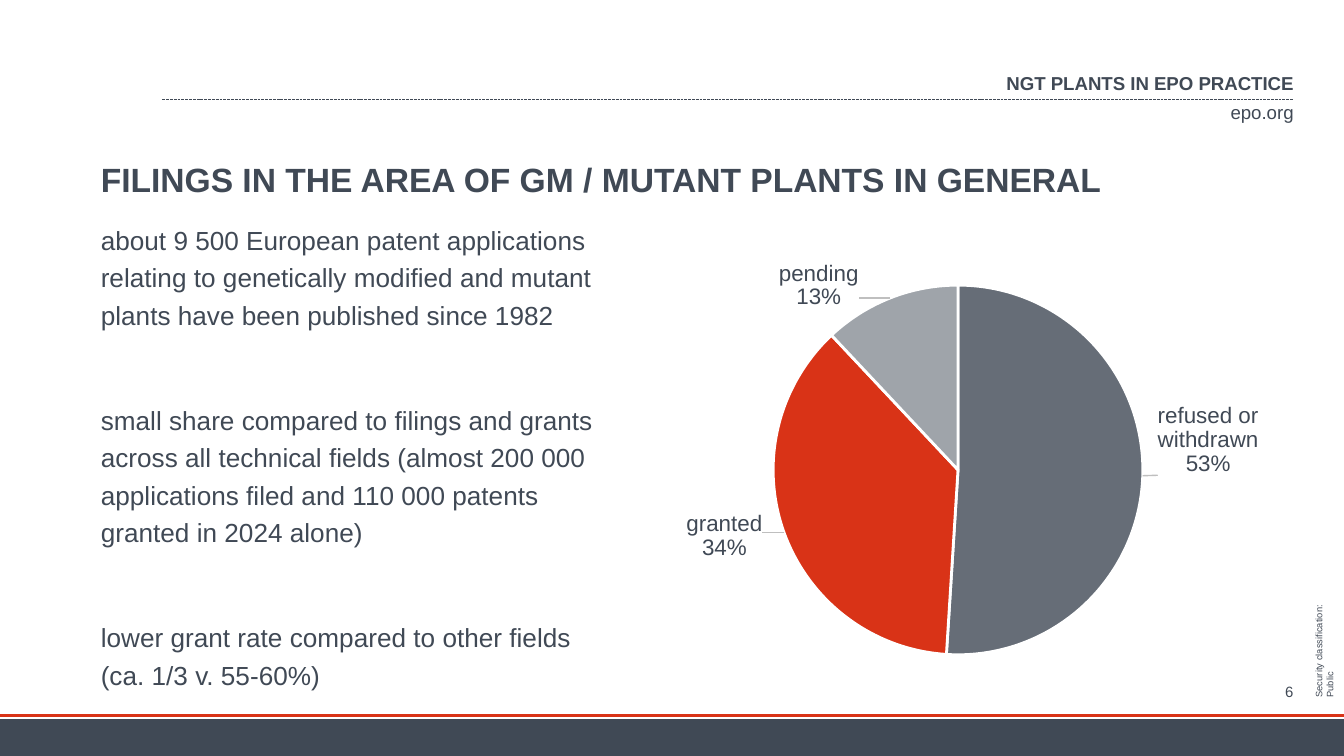
from dataclasses import dataclass
from typing import Any, NamedTuple

from lxml import etree
from pptx import Presentation
from pptx import util as u
from pptx.chart import data as chart_data
from pptx.dml.color import RGBColor
from pptx.enum import chart as chart_enum, dml, shapes, text
from pptx.oxml import parse_xml
from pptx.oxml.ns import nsdecls, qn


@dataclass(frozen=True)
class Theme:
    font: str = "Arial"
    ink: str = "404955"
    red: str = "D93317"
    slate: str = "666D77"
    grey: str = "9FA4AA"
    leader: str = "BFBFBF"
    white: str = "FFFFFF"
    title_size: float = 18
    body_size: float = 14
    label_size: float = 12
    header_size: float = 10
    number_size: float = 8
    tiny_size: float = 5


class Box(NamedTuple):
    left: float
    top: float
    width: float
    height: float


class Caption(NamedTuple):
    words: str
    box: Box
    size: float
    bold: bool = False
    align: Any = text.PP_ALIGN.RIGHT
    anchor: Any = text.MSO_ANCHOR.MIDDLE
    rotation: float = 0
    wrap: bool = False


class Rule(NamedTuple):
    left: float
    right: float
    y: float
    color: str
    width: float
    dash: Any = None


class Slice(NamedTuple):
    category: str
    value: float
    color: str
    label: tuple[str, str]
    shift: tuple[float, float]  # label offset as a share of the chart size


THEME = Theme()
LEFT, RIGHT, CONTENT_TOP, CONTENT_HEIGHT = 54, 693, 116.6, 244.8

CAPTIONS = [
    Caption("epo.org", Box(RIGHT - 34, 54, 34, 12.2), THEME.header_size),
    Caption("NGT PLANTS IN EPO PRACTICE", Box(RIGHT - 425, 38.2, 425, 13),
            THEME.header_size, bold=True),
    Caption("6", Box(RIGHT - 42.4, 366, 42.4, 9.4), THEME.number_size),
    Caption("Security classification: Public", Box(676.3, 340.8, 60, 5.8),
            THEME.tiny_size, align=text.PP_ALIGN.LEFT,
            anchor=text.MSO_ANCHOR.TOP, rotation=270, wrap=True),
]
RULES = [
    Rule(87, RIGHT, 53.3, THEME.ink, 0.5, dml.MSO_LINE.SQUARE_DOT),
    Rule(0, 720, 383.2, THEME.red, 1.5),
]
STATEMENTS = [
    "about 9 500 European patent applications relating to genetically modified "
    "and mutant plants have been published since 1982",
    "small share compared to filings and grants across all technical fields "
    "(almost 200 000 applications filed and 110 000 patents granted in 2024 alone)",
    "lower grant rate compared to other fields (ca. 1/3 v. 55-60%)",
]
SLICES = [
    Slice("Refused or withdrawn", 51, THEME.slate,
          ("refused or withdrawn", "53%"), (0.01, -0.08)),
    Slice("Granted", 37, THEME.red, ("granted", "34%"), (-0.02, -0.05)),
    Slice("Pending", 12, THEME.grey, ("pending", "13%"), (-0.04, 0.04)),
]


def apply_format(target: Any, values: dict[str, Any]) -> None:
    for name, value in values.items():
        setattr(target, name, value)


def style_font(font: Any, size: float, bold: bool = False) -> None:
    apply_format(font, {"name": THEME.font, "size": u.Pt(size), "bold": bold})
    font.color.rgb = RGBColor.from_string(THEME.ink)


def place(shape: Any, box: Box) -> None:
    apply_format(shape, {name: u.Pt(value) for name, value in box._asdict().items()})


def prepare_frame(frame: Any, anchor: Any, wrap: bool = True) -> None:
    margins = {f"margin_{side}": u.Pt(0) for side in ("left", "top", "right", "bottom")}
    apply_format(frame, {**margins, "vertical_anchor": anchor, "word_wrap": wrap,
                         "auto_size": text.MSO_AUTO_SIZE.NONE})


def draw_caption(slide: Any, caption: Caption) -> None:
    shape = slide.shapes.add_textbox(*map(u.Pt, caption.box))
    shape.rotation = caption.rotation
    prepare_frame(shape.text_frame, caption.anchor, caption.wrap)
    paragraph = shape.text_frame.paragraphs[0]
    apply_format(paragraph, {"text": caption.words, "alignment": caption.align})
    style_font(paragraph.font, caption.size, caption.bold)


def draw_rule(slide: Any, rule: Rule) -> None:
    connector = slide.shapes.add_connector(
        shapes.MSO_CONNECTOR.STRAIGHT,
        *map(u.Pt, (rule.left, rule.y, rule.right, rule.y)))
    connector.line.color.rgb = RGBColor.from_string(rule.color)
    apply_format(connector.line, {"width": u.Pt(rule.width), "dash_style": rule.dash})
    etree.SubElement(connector._element.spPr, qn("a:effectLst"))


def draw_footer_bar(slide: Any) -> None:
    bar = slide.shapes.add_shape(shapes.MSO_SHAPE.RECTANGLE,
                                 *map(u.Pt, (0, 385.2, 720, 19.8)))
    bar.shadow.inherit = False
    bar.fill.solid()
    bar.fill.fore_color.rgb = RGBColor.from_string(THEME.ink)
    bar.line.fill.background()


def fill_title(title: Any) -> None:
    place(title, Box(LEFT, 62.8, RIGHT - LEFT, 43.9))
    prepare_frame(title.text_frame, text.MSO_ANCHOR.BOTTOM)
    paragraph = title.text_frame.paragraphs[0]
    apply_format(paragraph, {"text": "FILINGS IN THE AREA OF GM / MUTANT PLANTS IN GENERAL",
                             "alignment": text.PP_ALIGN.LEFT, "line_spacing": 1.0})
    style_font(paragraph.font, THEME.title_size, bold=True)


def fill_body(body: Any) -> None:
    place(body, Box(LEFT, CONTENT_TOP, 275, CONTENT_HEIGHT))
    frame = body.text_frame
    prepare_frame(frame, text.MSO_ANCHOR.TOP)
    for index, statement in enumerate(STATEMENTS):
        paragraph = frame.add_paragraph() if index else frame.paragraphs[0]
        apply_format(paragraph, {"text": statement, "line_spacing": 1.2,
                                 "space_before": u.Pt(36 if index else 0)})
        properties = paragraph._p.get_or_add_pPr()
        for name in ("marL", "indent"):
            properties.set(name, "0")
        etree.SubElement(properties, qn("a:buNone"))
        style_font(paragraph.font, THEME.body_size)


def manual_layout(x: float, y: float, size: str = "", target: str = "") -> Any:
    return parse_xml(f'<c:layout {nsdecls("c")}><c:manualLayout>{target}'
                     f'<c:x val="{x}"/><c:y val="{y}"/>{size}</c:manualLayout></c:layout>')


def draw_slice(point: Any, part: Slice) -> None:
    point.format.fill.solid()
    point.format.fill.fore_color.rgb = RGBColor.from_string(part.color)
    point.format.line.color.rgb = RGBColor.from_string(THEME.white)
    point.format.line.width = u.Pt(1.5)
    label = point.data_label
    frame = label.text_frame
    for index, words in enumerate(part.label):
        paragraph = frame.add_paragraph() if index else frame.paragraphs[0]
        run = paragraph.add_run()
        run.text = words
        style_font(run.font, THEME.label_size)
    label.position = chart_enum.XL_LABEL_POSITION.OUTSIDE_END
    label._dLbl.insert(1, manual_layout(*part.shift))


def draw_pie(slide: Any) -> None:
    data = chart_data.CategoryChartData()
    data.categories = [part.category for part in SLICES]
    data.add_series("Series 1", [part.value for part in SLICES])
    chart = slide.shapes.add_chart(
        chart_enum.XL_CHART_TYPE.PIE,
        *map(u.Pt, (330.4, CONTENT_TOP - 0.6, 380.9, CONTENT_HEIGHT)), data).chart
    apply_format(chart, {"has_legend": False, "has_title": False})
    style_font(chart.font, THEME.header_size)
    plot = chart.plots[0]
    plot.vary_by_categories = True
    series = plot.series[0]

    # Labels with leader lines
    labels = series.data_labels
    apply_format(labels, {"show_percentage": True, "show_category_name": True,
                          "show_value": False, "number_format": "0%",
                          "number_format_is_linked": False,
                          "position": chart_enum.XL_LABEL_POSITION.OUTSIDE_END})
    style_font(labels.font, THEME.label_size)
    for index, part in enumerate(SLICES):
        draw_slice(series.points[index], part)
    element = labels._element
    for old in element.findall(qn("c:showLeaderLines")):
        element.remove(old)
    etree.SubElement(element, qn("c:showLeaderLines")).set("val", "1")
    element.append(parse_xml(
        f'<c:leaderLines {nsdecls("c", "a")}><c:spPr><a:ln w="9525"><a:solidFill>'
        f'<a:srgbClr val="{THEME.leader}"/></a:solidFill></a:ln></c:spPr></c:leaderLines>'))

    # Fixed place of the pie inside the chart
    area = chart._chartSpace.chart.plotArea
    for old in area.findall(qn("c:layout")):
        area.remove(old)
    area.insert(0, manual_layout(
        0.22, 0.15, '<c:w val="0.52"/><c:h val="0.81"/>',
        '<c:layoutTarget val="inner"/><c:xMode val="edge"/><c:yMode val="edge"/>'))


def main() -> None:
    presentation = Presentation()
    apply_format(presentation, {"slide_width": u.Pt(720), "slide_height": u.Pt(405)})
    slide = presentation.slides.add_slide(presentation.slide_layouts[1])

    # Frame of the slide
    draw_footer_bar(slide)
    for rule in RULES:
        draw_rule(slide, rule)
    for caption in CAPTIONS:
        draw_caption(slide, caption)

    # Content
    fill_title(slide.shapes.title)
    fill_body(slide.placeholders[1])
    draw_pie(slide)
    presentation.save("out.pptx")


if __name__ == "__main__":
    main()
